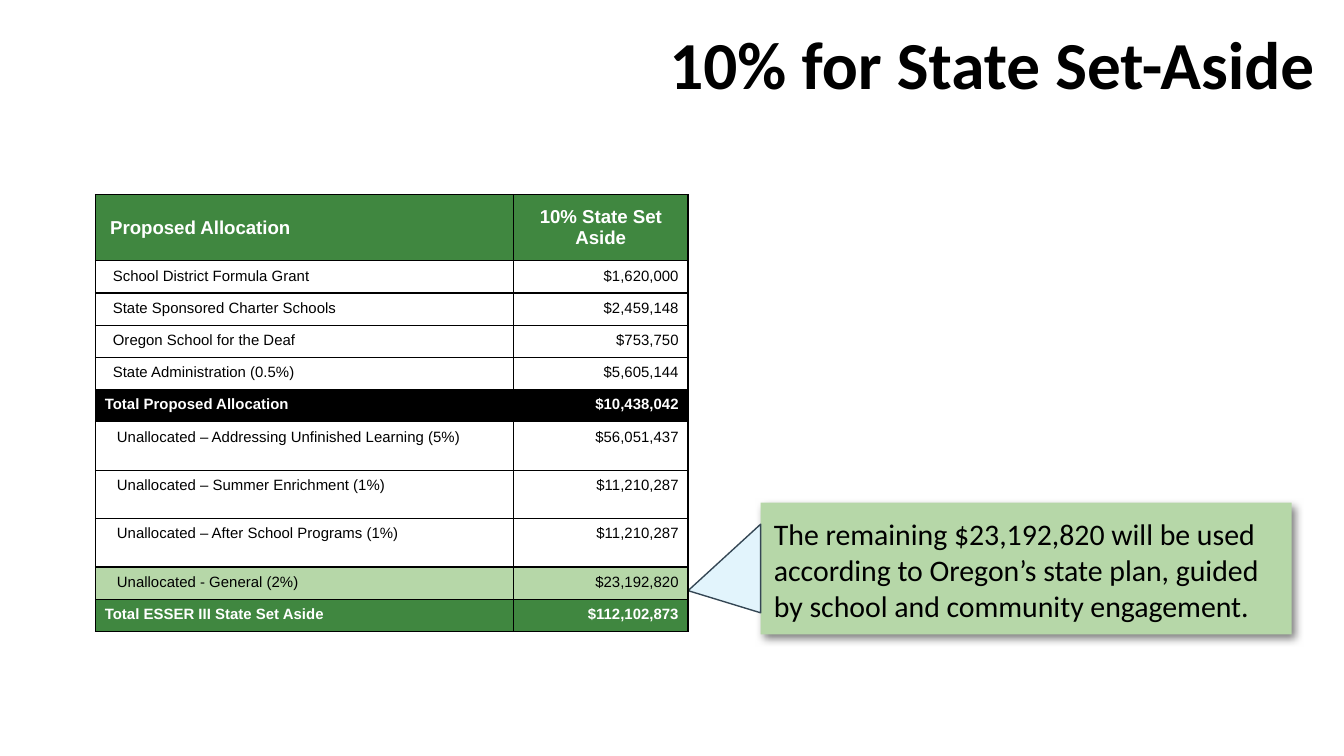
"""Builds the slide on the 10% state set-aside."""
import lxml.etree
import pptx
import pptx.dml.color
import pptx.enum.shapes
import pptx.enum.text
import pptx.oxml.ns
import pptx.util

Inches = pptx.util.Inches
Pt = pptx.util.Pt
ALIGN = pptx.enum.text.PP_ALIGN
ANCHOR = pptx.enum.text.MSO_ANCHOR
SHAPE = pptx.enum.shapes.MSO_SHAPE
qn = pptx.oxml.ns.qn

COLORS = {"black": "000000", "white": "FFFFFF", "green": "408740",
          "light_green": "B6D7A8", "pale_blue": "E2F4FC", "slate": "344654"}

TITLE = "10% for State Set-Aside"
NOTE = ("The remaining $23,192,820 will be used according to Oregon’s state plan, "
        "guided by school and community engagement.")

ROWS = [
    ("Proposed Allocation", "10% State Set Aside", "header"),
    ("School District Formula Grant", "$1,620,000", "item"),
    ("State Sponsored Charter Schools", "$2,459,148", "item"),
    ("Oregon School for the Deaf", "$753,750", "item"),
    ("State Administration (0.5%)", "$5,605,144", "item"),
    ("Total Proposed Allocation", "$10,438,042", "subtotal"),
    ("Unallocated – Addressing Unfinished Learning (5%)", "$56,051,437", "unallocated"),
    ("Unallocated – Summer Enrichment (1%)", "$11,210,287", "unallocated"),
    ("Unallocated – After School Programs (1%)", "$11,210,287", "unallocated"),
    ("Unallocated - General (2%)", "$23,192,820", "general"),
    ("Total ESSER III State Set Aside", "$112,102,873", "total"),
]

STYLE_FIELDS = ("height", "indent", "fill", "color", "bold", "size")
STYLES = {
    "header": (0.49, 0.04, "green", "white", True, 10),
    "item": (0.24, 0.06, "white", "black", False, 8),
    "subtotal": (0.24, 0, "black", "white", True, 8),
    "unallocated": (0.36, 0.09, "white", "black", False, 8),
    "general": (0.24, 0.09, "light_green", "black", False, 8),
    "total": (0.24, 0, "green", "white", True, 8),
}
COLUMN_WIDTHS = (3.11, 1.3)
CELL_MARGIN = 0.07


def rgb(name):
    return pptx.dml.color.RGBColor.from_string(COLORS[name])


def paint(target, name):
    target.fill.solid()
    target.fill.fore_color.rgb = rgb(name)


def write(frame, text, font, size, color, bold=False, align=ALIGN.LEFT):
    frame.word_wrap = True
    para = frame.paragraphs[0]
    para.text = text
    para.alignment = align
    para.font.name = font
    para.font.size = Pt(size)
    para.font.bold = bold
    para.font.color.rgb = rgb(color)
    return para


def add_shadow(shape):
    effects = shape._element.spPr.find(qn("a:effectLst"))
    shadow = lxml.etree.SubElement(effects, qn("a:outerShdw"), blurRad=str(Pt(4.5)),
                                   dist=str(Pt(3)), dir=str(50 * 60000), rotWithShape="0")
    color = lxml.etree.SubElement(shadow, qn("a:srgbClr"), val=COLORS["black"])
    lxml.etree.SubElement(color, qn("a:alpha"), val="50000")


def add_borders(cell):
    properties = cell._tc.get_or_add_tcPr()
    for position, side in enumerate(("lnL", "lnR", "lnT", "lnB")):
        line = lxml.etree.Element(qn("a:" + side), w=str(Pt(0.75)))
        fill = lxml.etree.SubElement(line, qn("a:solidFill"))
        lxml.etree.SubElement(fill, qn("a:srgbClr"), val=COLORS["black"])
        properties.insert(position, line)


def add_title(slide):
    box = slide.shapes.add_textbox(Inches(2.06), Inches(0.09), Inches(7.82), Inches(0.83))
    box.text_frame.vertical_anchor = ANCHOR.MIDDLE
    para = write(box.text_frame, TITLE, "Calibri", 36, "black", True, ALIGN.RIGHT)
    para.line_spacing = 0.9


def add_note(slide):
    box = slide.shapes.add_shape(SHAPE.RECTANGLE, Inches(5.66), Inches(3.74),
                                 Inches(3.95), Inches(0.98))
    box.shadow.inherit = False
    paint(box, "light_green")
    box.line.fill.background()
    add_shadow(box)
    frame = box.text_frame
    frame.vertical_anchor = ANCHOR.TOP
    frame.margin_left = frame.margin_right = Inches(0.1)
    frame.margin_top = frame.margin_bottom = Inches(0.1)
    write(frame, NOTE, "Calibri", 16, "black")

    pointer = slide.shapes.add_shape(SHAPE.ISOSCELES_TRIANGLE, Inches(5.06), Inches(3.96),
                                     Inches(0.66), Inches(0.54))
    pointer.shadow.inherit = False
    pointer.adjustments[0] = 0.25
    pointer.rotation = 270
    paint(pointer, "pale_blue")
    pointer.line.color.rgb = rgb("slate")
    pointer.line.width = Pt(0.75)


def add_allocation_table(slide):
    styles = {name: dict(zip(STYLE_FIELDS, values)) for name, values in STYLES.items()}
    height = sum(styles[name]["height"] for _, _, name in ROWS)
    table = slide.shapes.add_table(len(ROWS), len(COLUMN_WIDTHS), Inches(0.71), Inches(1.45),
                                   Inches(sum(COLUMN_WIDTHS)), Inches(height)).table
    table.horz_banding = False
    for column, width in zip(table.columns, COLUMN_WIDTHS):
        column.width = Inches(width)
    for row, (label, amount, name) in zip(table.rows, ROWS):
        style = styles[name]
        row.height = Inches(style["height"])
        is_header = name == "header"
        amount_align = ALIGN.CENTER if is_header else ALIGN.RIGHT
        contents = ((label, style["indent"], ALIGN.JUSTIFY), (amount, 0, amount_align))
        for cell, (text, indent, align) in zip(row.cells, contents):
            cell.margin_left = Inches(CELL_MARGIN + indent)
            cell.margin_right = Inches(CELL_MARGIN)
            cell.margin_top = cell.margin_bottom = Inches(0.05)
            cell.vertical_anchor = ANCHOR.MIDDLE if is_header else ANCHOR.TOP
            paint(cell, style["fill"])
            add_borders(cell)
            write(cell.text_frame, text, "Arial", style["size"], style["color"],
                  style["bold"], align)


def main():
    deck = pptx.Presentation()
    deck.slide_width = Inches(10)
    deck.slide_height = deck.slide_width * 9 // 16
    slide = deck.slides.add_slide(deck.slide_layouts[6])
    add_title(slide)
    add_note(slide)
    add_allocation_table(slide)
    deck.save("out.pptx")


if __name__ == "__main__":
    main()
